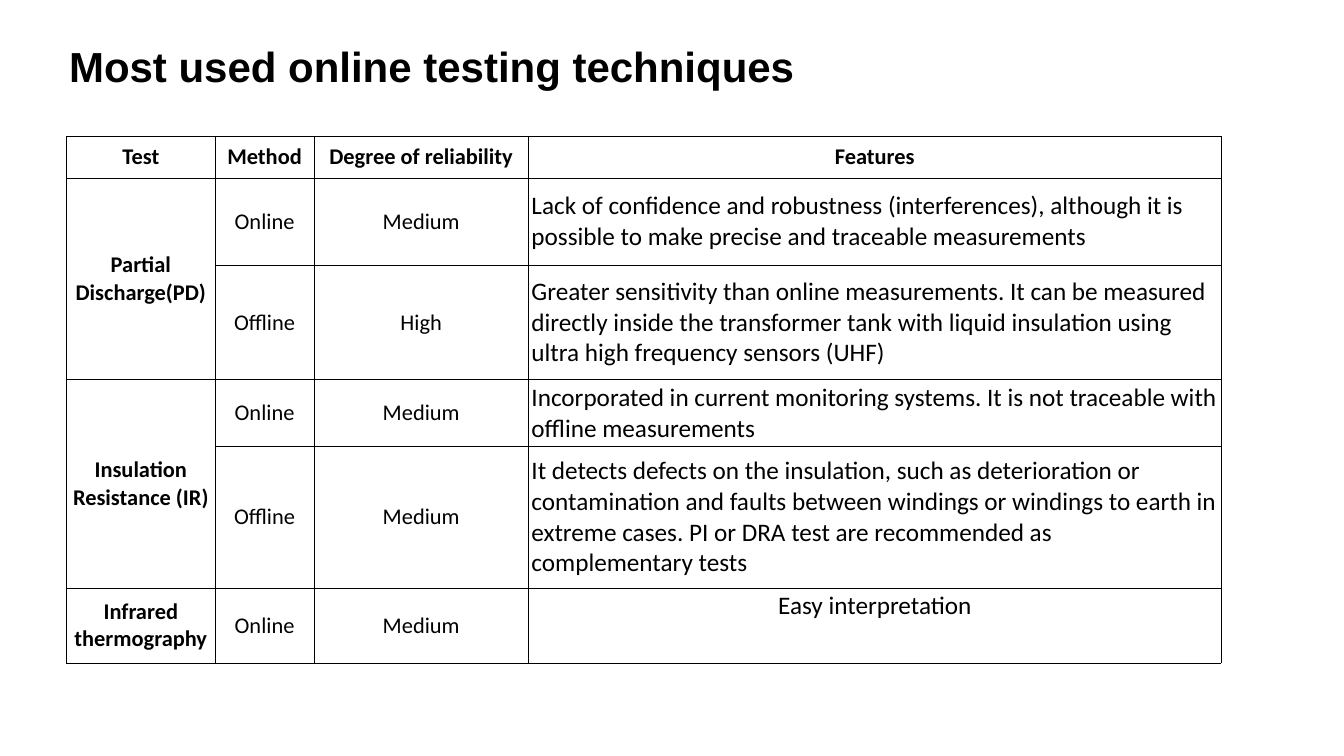
from lxml import etree
from pptx import Presentation
from pptx.dml.color import RGBColor
from pptx.enum import text
from pptx.oxml import ns
from pptx.util import Pt

BLACK = RGBColor(0, 0, 0)
MID, TOP = text.MSO_ANCHOR.MIDDLE, text.MSO_ANCHOR.TOP
LEFT, CENTER = text.PP_ALIGN.LEFT, text.PP_ALIGN.CENTER
SIDES = ("left", "right", "top", "bottom")

COLS = (212.5, 141, 306.5, 989.5)
ROWS = (60, 124.5, 163.5, 85, 202.5, 107.5)
HEAD = ("Test", "Method", "Degree of reliability", "Features")
# An empty test name continues the cell above
TESTS = (
    ("Partial Discharge(PD)", "Online", "Medium",
     "Lack of confidence and robustness (interferences), although it is "
     "possible to make precise and traceable measurements"),
    ("", "Offline", "High",
     "Greater sensitivity than online measurements. It can be measured "
     "directly inside the transformer tank with liquid insulation using "
     "ultra high frequency sensors (UHF)"),
    ("Insulation Resistance (IR)", "Online", "Medium",
     "Incorporated in current monitoring systems. It is not traceable with "
     "offline measurements"),
    ("", "Offline", "Medium",
     "It detects defects on the insulation, such as deterioration or "
     "contamination and faults between windings or windings to earth in "
     "extreme cases. PI or DRA test are recommended as complementary tests"),
    ("Infrared thermography", "Online", "Medium", "Easy interpretation"),
)


def write(frame, words, align, **fmt):
    """Put one formatted paragraph in a text frame."""
    para = frame.paragraphs[0]
    para.alignment = align
    run = para.add_run()
    run.text = words
    for key, val in fmt.items():
        setattr(run.font, key, val)
    run.font.color.rgb = BLACK


def inset(item, gap):
    """Set the same margin on all sides of a cell or text frame."""
    for side in SIDES:
        setattr(item, f"margin_{side}", Pt(gap))


def border(cell):
    """Draw a thin black line round a cell."""
    props = cell._tc.get_or_add_tcPr()
    for side in "LRTB":
        line = etree.SubElement(props, ns.qn(f"a:ln{side}"), w=str(Pt(1)))
        fill = etree.SubElement(line, ns.qn("a:solidFill"))
        etree.SubElement(fill, ns.qn("a:srgbClr"), val=str(BLACK))


def add_title(slide, words):
    frame = slide.shapes.add_textbox(Pt(95), Pt(54), Pt(1730), Pt(80)).text_frame
    frame.word_wrap = True
    inset(frame, 3.6)
    write(frame, words, LEFT, name="Arial", size=Pt(60), bold=True)


def add_grid(slide, data):
    grid = slide.shapes.add_table(len(ROWS), len(COLS), Pt(95), Pt(194.5),
                                  Pt(sum(COLS)), Pt(sum(ROWS))).table
    grid.first_row = grid.horz_banding = False
    for col, width in zip(grid.columns, COLS):
        col.width = Pt(width)
    for row, height in zip(grid.rows, ROWS):
        row.height = Pt(height)

    last = len(ROWS) - 1, len(COLS) - 1
    for r, line in enumerate(data):
        for c, words in enumerate(line):
            cell = grid.cell(r, c)
            border(cell)
            cell.fill.background()
            inset(cell, 4.3)
            cell.vertical_anchor = TOP if (r, c) == last else MID
            if not words:
                grid.cell(r - 1, c).merge(cell)
                continue
            note = r > 0 and c == last[1]
            align = LEFT if note and r < last[0] else CENTER
            write(cell.text_frame, words, align, name="Calibri",
                  size=Pt(36 if note else 32), bold=r == 0 or c == 0)


def main():
    deck = Presentation()
    deck.slide_width, deck.slide_height = Pt(1920), Pt(1080)
    slide = deck.slides.add_slide(deck.slide_layouts[6])
    # Heading
    add_title(slide, "Most used online testing techniques")
    # Comparison of tests
    add_grid(slide, (HEAD, *TESTS))
    deck.save("out.pptx")


if __name__ == "__main__":
    main()
